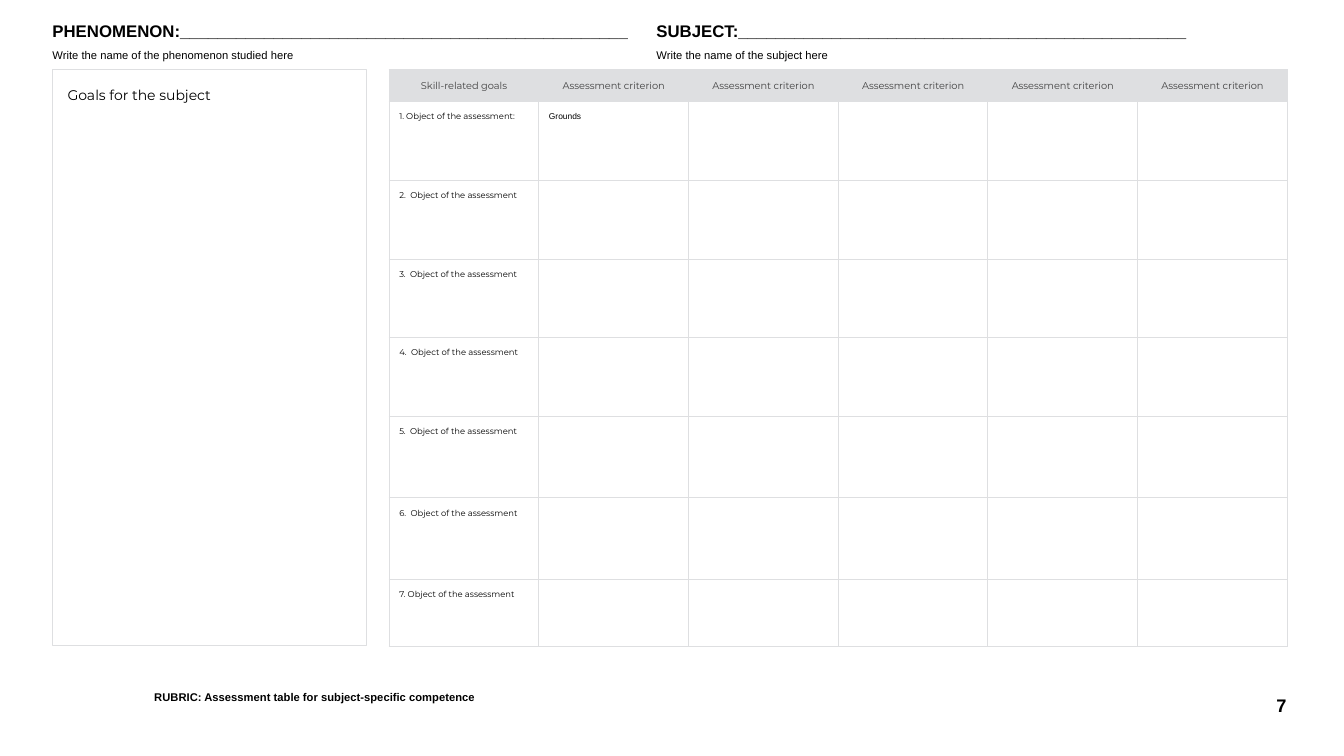
from lxml import etree
from pptx import Presentation
from pptx.dml.color import RGBColor
from pptx.enum.shapes import MSO_SHAPE
from pptx.enum.text import MSO_ANCHOR, PP_ALIGN
from pptx.oxml.ns import qn
from pptx.util import Inches, Pt

GREY, DARK, BLACK = "DEDFE1", "434343", "000000"
ROW_HEIGHTS = [0.32, 0.78, 0.78, 0.78, 0.78, 0.81, 0.81, 0.66]
HEADERS = ["Skill-related goals"] + ["Assessment criterion"] * 5
OBJECTS = [
    "1. Object of the assessment:",
    "2.  Object of the assessment",
    "3.  Object of the assessment",
    "4.  Object of the assessment",
    "5.  Object of the assessment",
    "6.  Object of the assessment",
    "7. Object of the assessment",
]


def rgb(value):
    """Turn a hex string into a colour."""
    return RGBColor.from_string(value)


def style(p, size, font="Arial", color=BLACK, bold=False, align=PP_ALIGN.LEFT):
    """Set the font and alignment of a paragraph."""
    p.alignment = align
    p.font.size = Pt(size)
    p.font.name = font
    p.font.bold = bold
    p.font.color.rgb = rgb(color)


def add_text(s, x, y, w, h, lines, left=0.02, spacing=None, anchor=MSO_ANCHOR.TOP):
    """Add a text box from (text, style) pairs, one per paragraph."""
    tf = s.shapes.add_textbox(Inches(x), Inches(y), Inches(w), Inches(h)).text_frame
    tf.word_wrap = True
    tf.vertical_anchor = anchor
    tf.margin_left = Inches(left)
    tf.margin_right = tf.margin_top = tf.margin_bottom = 0
    for i, (text, look) in enumerate(lines):
        p = tf.add_paragraph() if i else tf.paragraphs[0]
        p.text = text
        p.line_spacing = spacing
        if i:
            p.space_before = Pt(6)
        style(p, **look)


def add_heading(s, x, label, hint):
    """Add a fill-in heading with its hint below."""
    lines = [(f"{label}:" + "_" * 48, dict(size=12, bold=True)), (hint, dict(size=8))]
    add_text(s, x, 0.23, 6.12, 0.35, lines, spacing=0.9)


def add_frame(s, x, y, w, h):
    """Add an unfilled outlined rectangle."""
    sp = s.shapes.add_shape(MSO_SHAPE.RECTANGLE, Inches(x), Inches(y), Inches(w), Inches(h))
    sp.shadow.inherit = False
    sp.fill.background()
    sp.line.color.rgb = rgb(GREY)
    sp.line.width = Pt(0.75)


def set_borders(cell, color):
    """Draw a thin line on all four sides of a cell."""
    props = cell._tc.get_or_add_tcPr()
    for i, side in enumerate(("a:lnL", "a:lnR", "a:lnT", "a:lnB")):
        line = etree.Element(qn(side), w=str(Pt(0.75)))
        fill = etree.SubElement(line, qn("a:solidFill"))
        etree.SubElement(fill, qn("a:srgbClr"), val=color)
        props.insert(i, line)


def fill_cell(cell, text, **look):
    """Write styled text in a cell."""
    p = cell.text_frame.paragraphs[0]
    p.text = text
    style(p, **look)


def add_rubric(s, x, y, w):
    """Add the assessment table."""
    rows, cols = len(ROW_HEIGHTS), len(HEADERS)
    table = s.shapes.add_table(rows, cols, Inches(x), Inches(y), Inches(w),
                               Inches(sum(ROW_HEIGHTS))).table
    for row, height in zip(table.rows, ROW_HEIGHTS):
        row.height = Inches(height)
    for col in table.columns:
        col.width = Inches(w / cols)
    for cell in table.iter_cells():
        cell.margin_left = cell.margin_right = Inches(0.1)
        cell.margin_top = cell.margin_bottom = Inches(0.1)
        cell.fill.background()
        set_borders(cell, GREY)
    for c, header in enumerate(HEADERS):
        cell = table.cell(0, c)
        cell.fill.solid()
        cell.fill.fore_color.rgb = rgb(GREY)
        fill_cell(cell, header, size=7, font="Montserrat", color=DARK, align=PP_ALIGN.CENTER)
    for r, text in enumerate(OBJECTS, 1):
        fill_cell(table.cell(r, 0), text, size=6, font="Montserrat")
    fill_cell(table.cell(1, 1), "Grounds", size=6)


def main():
    """Build the rubric slide."""
    prs = Presentation()
    prs.slide_width, prs.slide_height = Inches(13.33), Inches(7.5)
    s = prs.slides.add_slide(prs.slide_layouts[6])
    add_rubric(s, 3.86, 0.69, 8.91)
    add_text(s, 11.41, 6.86, 1.35, 0.28,
             [("7", dict(size=13, bold=True, align=PP_ALIGN.RIGHT))],
             left=0, anchor=MSO_ANCHOR.MIDDLE)
    add_heading(s, 0.5, "PHENOMENON", "Write the name of the phenomenon studied here")
    add_heading(s, 6.49, "SUBJECT", "Write the name of the subject here")
    add_text(s, 1.51, 6.86, 4.1, 0.22,
             [("RUBRIC: Assessment table for subject-specific competence",
               dict(size=8, bold=True))], spacing=0.9)
    add_frame(s, 0.52, 0.69, 3.12, 5.71)
    add_text(s, 0.65, 0.86, 2.86, 0.35,
             [("Goals for the subject", dict(size=10, font="Montserrat"))])
    prs.save("out.pptx")


if __name__ == "__main__":
    main()
